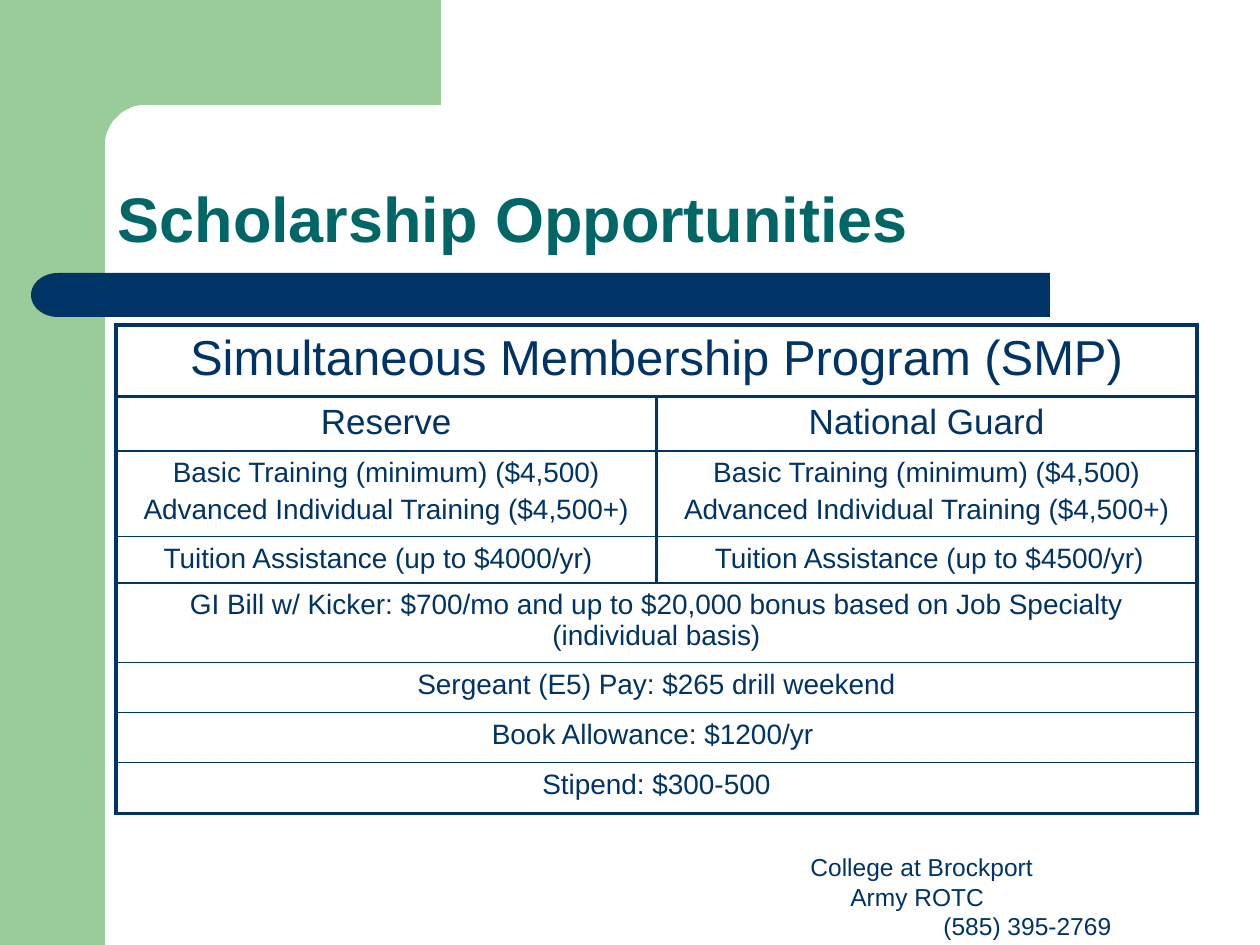
from math import cos, pi, sin

from lxml import etree
from pptx import Presentation
from pptx.dml.color import RGBColor
from pptx.enum.shapes import MSO_SHAPE as Shape
from pptx.enum.text import MSO_ANCHOR as Anchor, PP_ALIGN as Align
from pptx.oxml.ns import qn
from pptx.util import Pt

PX = 914400 / 126
GREEN = RGBColor(0x99, 0xCC, 0x99)
NAVY = RGBColor(0x00, 0x33, 0x66)
TEAL = RGBColor(0x00, 0x66, 0x66)
FONT = "Arial"
THICK, THIN = 2.25, 1

TRAINING = "Basic Training (minimum) ($4,500)\nAdvanced Individual Training ($4,500+)"
# Height in px, font size, cell texts (a single text spans both columns)
ROWS = [
    (68, 28, ["Simultaneous Membership Program (SMP)"]),
    (53, 20, ["Reserve", "National Guard"]),
    (80, 16, [TRAINING, TRAINING]),
    (44, 16, ["Tuition Assistance (up to $4000/yr)", "Tuition Assistance (up to $4500/yr)"]),
    (75, 16, ["GI Bill w/ Kicker: $700/mo and up to $20,000 bonus "
              "based on Job Specialty (individual basis)"]),
    (50, 16, ["Sergeant (E5) Pay: $265 drill weekend"]),
    (50, 16, ["Book Allowance: $1200/yr "]),
    (51, 16, ["Stipend: $300-500"]),
]
TUITION_ROW = 3
# Each contact line with its indent in px
CONTACT = [("College at Brockport", 0), ("Army ROTC", 40), ("(585) 395-2769", 133)]


def px(*lengths):
    return [round(length * PX) for length in lengths]


def paint(shape, color):
    shape.shadow.inherit = False
    shape.fill.solid()
    shape.fill.fore_color.rgb = color
    shape.line.fill.background()


def style(paragraph, size, color=NAVY, bold=False):
    for run in paragraph.runs:
        run.font.name = FONT
        run.font.size = Pt(size)
        run.font.bold = bold
        run.font.color.rgb = color


def add_frame(slide, left, top, width, height):
    """Green side band and top corner with a rounded inner edge."""
    band = 105
    paint(slide.shapes.add_shape(Shape.RECTANGLE, *px(left, top, band, height)), GREEN)

    radius, overlap, corner_bottom = 41, 63, 161
    center = band + radius
    arc = [(center - radius * sin(step * pi / 24), center - radius * cos(step * pi / 24))
           for step in range(13)]
    outline = [(width, band), *arc, (band, corner_bottom),
               (overlap, corner_bottom), (overlap, 0)]
    builder = slide.shapes.build_freeform(width, 0, scale=PX)
    builder.add_line_segments(outline, close=True)
    paint(builder.convert_to_shape(*px(left, top)), GREEN)


def add_title(slide, left, top, width, height):
    title = slide.shapes.title
    title.left, title.top, title.width, title.height = px(left, top, width, height)
    frame = title.text_frame
    frame.text = "Scholarship Opportunities"
    frame.vertical_anchor = Anchor.BOTTOM
    heading = frame.paragraphs[0]
    heading.alignment = Align.LEFT
    heading.line_spacing = 0.9
    style(heading, 36, TEAL, bold=True)


def add_bar(slide, left, top, width, height):
    """Navy bar with a round left end."""
    cap = 54
    bar = slide.shapes.add_shape(Shape.RECTANGLE,
                                 *px(left + cap - 1, top, width - cap + 1, height))
    end = slide.shapes.add_shape(Shape.FLOWCHART_DELAY, *px(left, top, cap, height))
    end.element.spPr.find(qn("a:xfrm")).set("flipH", "1")
    for part in (bar, end):
        paint(part, NAVY)


def set_borders(cell, top, bottom):
    properties = cell._tc.get_or_add_tcPr()
    widths = {"lnL": THICK, "lnR": THICK, "lnT": top, "lnB": bottom}
    for side, width in widths.items():
        line = etree.SubElement(properties, qn(f"a:{side}"), w=str(Pt(width)))
        fill = etree.SubElement(line, qn("a:solidFill"))
        etree.SubElement(fill, qn("a:srgbClr"), val=str(NAVY))


def add_programs(slide, left, top, width):
    heights = [height for height, _, _ in ROWS]
    table = slide.shapes.add_table(len(ROWS), 2,
                                   *px(left, top, width, sum(heights))).table
    table.first_row = table.horz_banding = False
    last = len(ROWS) - 1
    for index, (height, size, texts) in enumerate(ROWS):
        table.rows[index].height = px(height)[0]
        cells = table.rows[index].cells
        for cell in cells:
            set_borders(cell, THICK if index <= 1 else THIN,
                        THICK if index in (0, last) else THIN)
            cell.fill.background()
        if len(texts) == 1:
            cells[0].merge(cells[1])
        for cell, text in zip(cells, texts):
            cell.text_frame.text = text
            for number, paragraph in enumerate(cell.text_frame.paragraphs):
                paragraph.alignment = Align.CENTER
                if number:
                    paragraph.space_before = Pt(size * 0.2)
                style(paragraph, size)

    # The tuition texts sit slightly off center
    reserve, guard = table.rows[TUITION_ROW].cells
    reserve.margin_right, guard.margin_left = px(29, 18)


def add_contact(slide, left, top, width, height):
    frame = slide.shapes.add_textbox(*px(left, top, width, height)).text_frame
    frame.word_wrap = True
    frame.vertical_anchor = Anchor.BOTTOM
    frame.text = "\n".join(text for text, _ in CONTACT)
    for paragraph, (_, indent) in zip(frame.paragraphs, CONTACT):
        paragraph.alignment = Align.LEFT
        paragraph._p.get_or_add_pPr().set("marL", str(px(indent)[0]))
        style(paragraph, 14)


def main():
    deck = Presentation()
    deck.slide_width, deck.slide_height = px(1260, 945)
    slide = deck.slides.add_slide(deck.slide_layouts[5])
    add_frame(slide, 0, 0, 441, 945)
    add_bar(slide, 31, 273, 1019, 44)
    add_contact(slide, 798, 882, 399, 65)
    add_title(slide, 105, 105, 1092, 157)
    add_programs(slide, 116, 325, 1081)
    deck.save("out.pptx")


if __name__ == "__main__":
    main()
